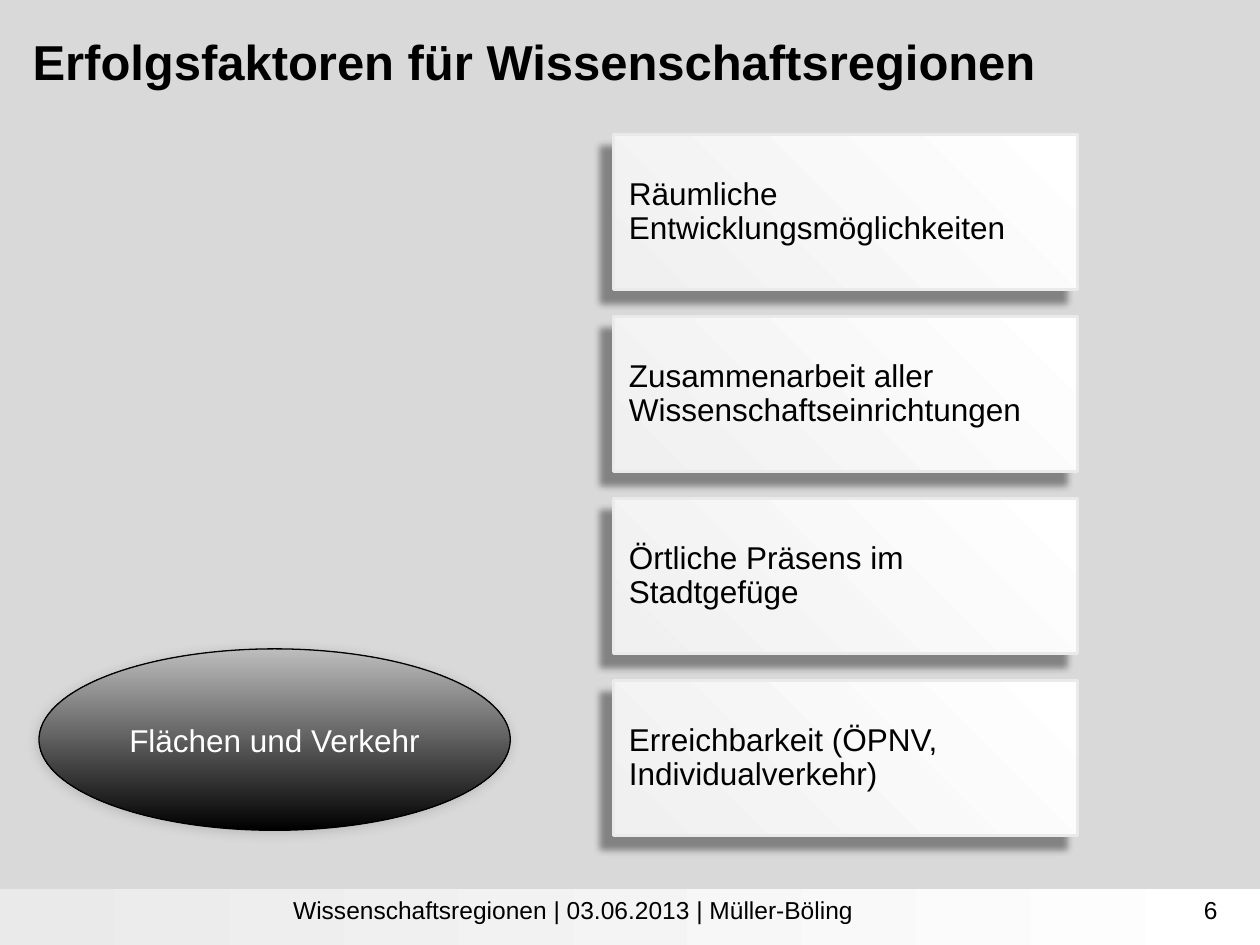
from lxml import etree
from pptx import Presentation
from pptx.dml.color import RGBColor
from pptx.enum.shapes import MSO_SHAPE
from pptx.enum.text import MSO_ANCHOR, PP_ALIGN
from pptx.oxml import parse_xml
from pptx.util import Pt

RECT, OVAL = MSO_SHAPE.RECTANGLE, MSO_SHAPE.OVAL
LEFT, MID, RIGHT = PP_ALIGN.LEFT, PP_ALIGN.CENTER, PP_ALIGN.RIGHT
NS = "http://schemas.openxmlformats.org/drawingml/2006/main"


def rgb(code):
    return RGBColor.from_string(code)


def put(shape, text, align, **form):
    """Write one Arial paragraph; form holds font values."""
    shape.text_frame.word_wrap = True
    para = shape.text_frame.paragraphs[0]
    para.alignment = align
    run = para.add_run()
    run.text = text
    run.font.color.rgb = rgb(form.pop("color", "000000"))
    for key, val in {"name": "Arial", **form}.items():
        setattr(run.font, key, val)


deck = Presentation()
deck.slide_width, deck.slide_height = Pt(720), Pt(540)
slide = deck.slides.add_slide(deck.slide_layouts[6])
slide.background.fill.solid()
slide.background.fill.fore_color.rgb = rgb("D9D9D9")

# Title and footer texts: place, align, size, bold, top inset
TEXTS = [
    ("Erfolgsfaktoren für Wissenschaftsregionen",
     (11.5, 11.5, 692.6, 50.4), LEFT, 28, True, 6.5),
    ("Wissenschaftsregionen | 03.06.2013 | Müller-Böling",
     (11.5, 507.6, 632.2, 37.4), MID, 14, False, 3.6),
    ("6", (535, 507.6, 167.8, 37.4), RIGHT, 14, False, 3.6),
]

# Shapes: kind, place, gradient, angle, line, shadow (alpha, blur, distance)
SHAPES = [
    (RECT, (0, 508.3, 720, 31.7), ("FFFFFF", "EAEAEA"), 180, None, None, ""),
    (OVAL, (22.3, 370.8, 269.3, 103.7), ("000000", "BDBDBD"), 90,
     ("000000", 0.75), (15, 7, 1), "Flächen und Verkehr"),
]
FACTORS = [
    "Räumliche Entwicklungsmöglichkeiten",
    "Zusammenarbeit aller Wissenschaftseinrichtungen",
    "Örtliche Präsens im Stadtgefüge",
    "Erreichbarkeit (ÖPNV, Individualverkehr)",
]
for row, text in enumerate(FACTORS):
    SHAPES.append((RECT, (350.6, 77 + row * 104, 265, 88.6),
                   ("F0F0F0", "FFFFFF"), 45, ("EAEAEA", 1.5),
                   (40, 4, 10), text))

for kind, place, shades, angle, line, shade, text in SHAPES:
    shape = slide.shapes.add_shape(kind, *map(Pt, place))
    shape.shadow.inherit = False
    shape.fill.gradient()
    shape.fill.gradient_angle = angle
    for stop, code, pos in zip(shape.fill.gradient_stops, shades, (0, 1)):
        stop.color.rgb, stop.position = rgb(code), pos
    if line:
        shape.line.color.rgb, shape.line.width = rgb(line[0]), Pt(line[1])
    else:
        shape.line.fill.background()
    if shade:
        alpha, blur, dist = shade
        glow = parse_xml(
            f'<a:outerShdw xmlns:a="{NS}" blurRad="{Pt(blur)}" '
            f'dist="{Pt(dist)}" dir="8100000" algn="tr" rotWithShape="0">'
            f'<a:srgbClr val="000000"><a:alpha val="{alpha * 1000}"/>'
            '</a:srgbClr></a:outerShdw>')
        shape._element.spPr.find(etree.QName(NS, "effectLst").text).append(glow)
    if not text:
        continue
    frame = shape.text_frame
    frame.vertical_anchor = MSO_ANCHOR.MIDDLE
    if kind == OVAL:
        put(shape, text, MID, size=Pt(18), color="FFFFFF")
    else:
        put(shape, text, LEFT, size=Pt(18))
        frame.paragraphs[0].line_spacing = 0.9
        for side, gap in {"left": 8.8, "top": 3, "right": 3, "bottom": 3}.items():
            setattr(frame, f"margin_{side}", Pt(gap))

for text, place, align, size, bold, inset in TEXTS:
    box = slide.shapes.add_textbox(*map(Pt, place))
    box.text_frame.margin_top = Pt(inset)
    put(box, text, align, size=Pt(size), bold=bold)

deck.save("out.pptx")
